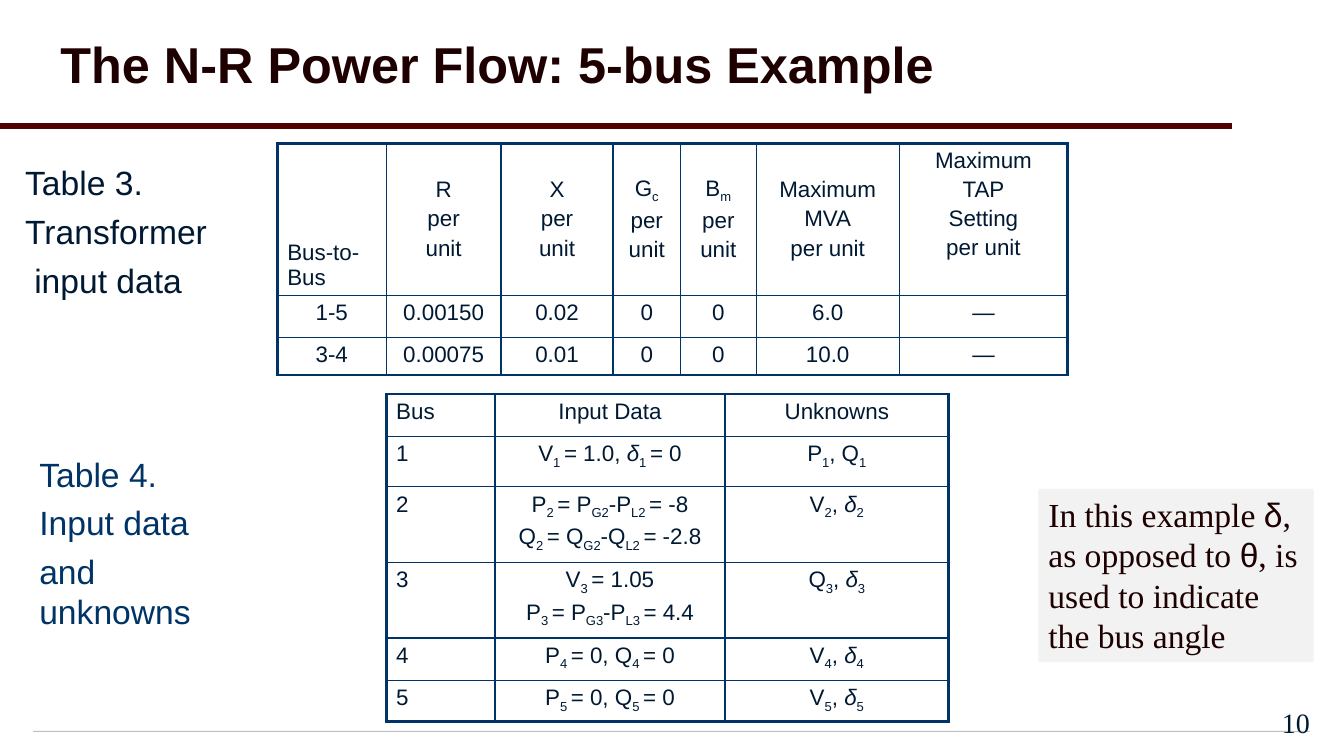
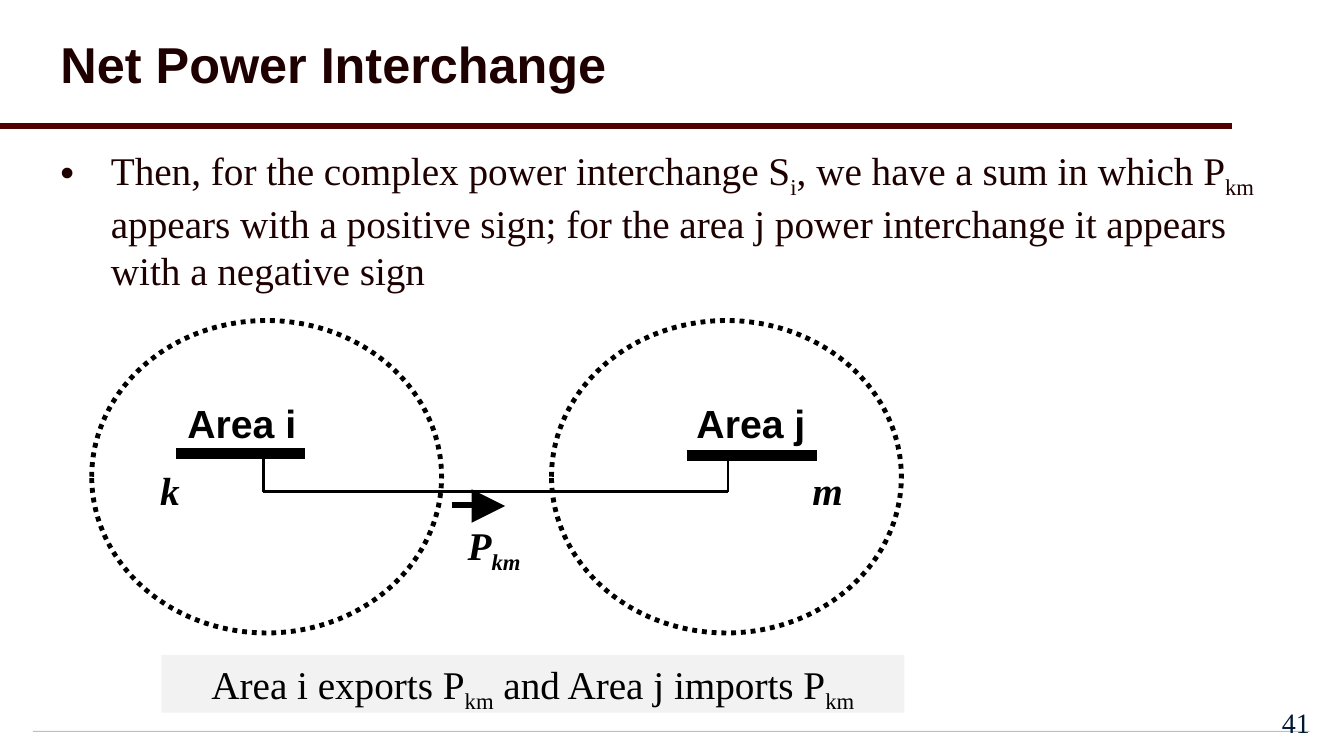
from lxml import etree
from pptx import Presentation
from pptx.dml.color import RGBColor
from pptx.enum.dml import MSO_LINE
from pptx.enum.shapes import MSO_CONNECTOR, MSO_SHAPE
from pptx.enum.text import MSO_ANCHOR, MSO_AUTO_SIZE, PP_ALIGN
from pptx.oxml.ns import qn
from pptx.util import Pt

PX = 9144  # 100 px to the inch
STRAIGHT = MSO_CONNECTOR.STRAIGHT
RECTANGLE, OVAL = MSO_SHAPE.RECTANGLE, MSO_SHAPE.OVAL
LEFT, CENTER, RIGHT = PP_ALIGN.LEFT, PP_ALIGN.CENTER, PP_ALIGN.RIGHT
TOP, MIDDLE, BOTTOM = MSO_ANCHOR.TOP, MSO_ANCHOR.MIDDLE, MSO_ANCHOR.BOTTOM
NO_AUTOFIT = MSO_AUTO_SIZE.NONE
DOTTED = MSO_LINE.ROUND_DOT

MAROON = RGBColor(0x50, 0x00, 0x00)
DARK_MAROON = RGBColor(0x1E, 0x00, 0x00)
NAVY = RGBColor(0x00, 0x19, 0x33)
BLUE = RGBColor(0x00, 0x33, 0x66)
GRAY = RGBColor(0xBF, 0xBF, 0xBF)
LIGHT_GRAY = RGBColor(0xF2, 0xF2, 0xF2)
BLACK = RGBColor(0x00, 0x00, 0x00)
SANS, SERIF = "Arial", "Times New Roman"


def write(frame, lines, size, color, font, align=LEFT, bold=False, italic=False,
          gap=0, greek_italic=False):
    """Fill a frame; "|" parts the spans of a line and "_" starts a subscript."""
    for index, line in enumerate(lines):
        para = frame.add_paragraph() if index else frame.paragraphs[0]
        para.alignment = align
        if index:
            para.space_before = Pt(gap)
        for piece in line.split("|"):
            span = para.add_run()
            span.text = piece.removeprefix("_")
            greek = piece in ("δ", "θ")
            span.font.name = SANS if greek else font
            span.font.size = Pt(size)
            span.font.bold = bold
            span.font.italic = italic or (greek and greek_italic)
            span.font.color.rgb = color
            if piece.startswith("_"):
                span.font.subscript = True
                span._r.get_or_add_rPr().set("baseline", "-25000")


def add_line(page, x1, y1, x2, y2, color, width, arrow=False):
    line = page.shapes.add_connector(STRAIGHT, x1 * PX, y1 * PX, x2 * PX, y2 * PX)
    line.line.color.rgb = color
    line.line.width = Pt(width)
    if arrow:
        etree.SubElement(line.line._get_or_add_ln(), qn("a:tailEnd"), type="triangle")
    etree.SubElement(line._element.spPr, qn("a:effectLst"))


deck = Presentation()
deck.slide_width, deck.slide_height = 1333 * PX, 750 * PX

# Shared frame: footer rule, title rule, title and page number
pages = []
for layout, title_text, number in (
    (5, "The N-R Power Flow: 5-bus Example", "10"),
    (1, "Net Power Interchange", "41"),
):
    page = deck.slides.add_slide(deck.slide_layouts[layout])
    pages.append(page)
    footer = page.shapes.add_shape(RECTANGLE, 33 * PX, 725 * PX, 1266 * PX, 1 * PX)
    footer.shadow.inherit = False
    footer.fill.solid()
    footer.fill.fore_color.rgb = GRAY
    footer.line.fill.background()
    add_line(page, 0, 125, 1222, 125, MAROON, 4)

    title = page.shapes.title
    title.left, title.top, title.width, title.height = 50 * PX, 8 * PX, 1222 * PX, 117 * PX
    title.text_frame.auto_size = NO_AUTOFIT
    title.text_frame.vertical_anchor = MIDDLE
    write(title.text_frame, [title_text], 36, DARK_MAROON, SANS, bold=True)
    title.text_frame.paragraphs[0].line_spacing = 0.9

    box = page.shapes.add_textbox(1242 * PX, 692 * PX, 67 * PX, 50 * PX)
    box.text_frame.vertical_anchor = MIDDLE
    write(box.text_frame, [number], 20, NAVY, SERIF, RIGHT)
example, interchange = pages

# Data of the two tables; "/" parts the lines of a cell
transformers = [
    ["Bus-to-Bus", "R/per/unit", "X/per/unit", "G|_c/per/unit", "B|_m/per/unit",
     "Maximum/MVA/per unit", "Maximum/TAP/Setting/per unit"],
    ["1-5", "0.00150", "0.02", "0", "0", "6.0", "—"],
    ["3-4", "0.00075", "0.01", "0", "0", "10.0", "—"],
]
unknowns = [
    ["Bus", "Input Data", "Unknowns"],
    ["1", "V|_1 |= 1.0, |δ|_1 |= 0", "P|_1|, Q|_1"],
    ["2", "P|_2 |= P|_G2|-P|_L2 |= -8/Q|_2 |= Q|_G2|-Q|_L2 |= -2.8", "V|_2|, |δ|_2"],
    ["3", "V|_3 |= 1.05/P|_3 |= P|_G3|-P|_L3 |= 4.4", "Q|_3|, |δ|_3"],
    ["4", "P|_4 |= 0, Q|_4 |= 0", "V|_4|, |δ|_4"],
    ["5", "P|_5 |= 0, Q|_5 |= 0", "V|_5|, |δ|_5"],
]

# Tables: thick outer border, thin inner lines
for left, top, widths, heights, rows in (
    (275, 142, [108, 114, 111, 67, 75, 142, 167], [151, 42, 37], transformers),
    (383, 391, [108, 228, 222], [42, 50, 75, 75, 42, 41], unknowns),
):
    last_row, last_column = len(heights) - 1, len(widths) - 1
    table = example.shapes.add_table(
        len(heights), len(widths), left * PX, top * PX, sum(widths) * PX, sum(heights) * PX
    ).table
    table.first_row = table.horz_banding = False
    for column, width in zip(table.columns, widths):
        column.width = width * PX
    for r, row in enumerate(rows):
        table.rows[r].height = heights[r] * PX
        for c, content in enumerate(row):
            cell = table.cell(r, c)
            plain_left = c == 0 and (r == 0 or rows is unknowns)
            write(cell.text_frame, content.split("/"), 16, NAVY, SANS,
                  LEFT if plain_left else CENTER, gap=3, greek_italic=True)
            if rows is transformers and r == 0:
                cell.vertical_anchor = {0: BOTTOM, last_column: TOP}.get(c, MIDDLE)
            borders = cell._tc.get_or_add_tcPr()
            for side, outer in (("L", c == 0), ("R", c == last_column),
                                ("T", r == 0), ("B", r == last_row)):
                edge = etree.SubElement(borders, qn("a:ln" + side), w=str(Pt(2.25 if outer else 1)))
                paint = etree.SubElement(edge, qn("a:solidFill"))
                etree.SubElement(paint, qn("a:srgbClr"), val=str(BLUE))
            cell.fill.background()

# Table captions
for left, top, width, height, color, lines in (
    (25, 161, 200, 137, NAVY, ["Table 3.", "Transformer", "input data"]),
    (39, 450, 159, 178, BLUE, ["Table 4.", "Input data", "and unknowns"]),
):
    box = example.shapes.add_textbox(left * PX, top * PX, width * PX, height * PX)
    frame = box.text_frame
    frame.word_wrap = True
    frame.margin_left = frame.margin_top = frame.margin_right = frame.margin_bottom = 0
    write(frame, lines, 24, color, SANS, gap=6)
    if color == NAVY:
        frame.paragraphs[2]._p.get_or_add_pPr().set("marL", str(9 * PX))

# Bulleted statement
body = interchange.placeholders[1]
body.left, body.top, body.width, body.height = 50 * PX, 140 * PX, 1208 * PX, 160 * PX
body.text_frame.auto_size = NO_AUTOFIT
bullet = body.text_frame.paragraphs[0]._p.get_or_add_pPr()
bullet.set("marL", str(50 * PX))
bullet.set("indent", str(-50 * PX))
bullet_color = etree.SubElement(bullet, qn("a:buClr"))
etree.SubElement(bullet_color, qn("a:srgbClr"), val=str(DARK_MAROON))
etree.SubElement(bullet, qn("a:buChar"), char="•")
write(body.text_frame, [
    "Then, for the complex power interchange S|_i|, we have a sum in which P|_km"
    "| appears with a positive sign; for the area j power interchange it appears"
    " with a negative sign"], 28, DARK_MAROON, SERIF)
body.text_frame.paragraphs[0].space_before = Pt(0)

# Bus bars, tie line and flow arrow
for x1, y1, x2, y2, width, arrow in (
    (175, 450, 303, 450, 8, False),
    (681, 452, 810, 452, 8, False),
    (261, 450, 261, 488, 2, False),
    (722, 452, 722, 488, 2, False),
    (261, 488, 722, 488, 2, False),
    (448, 501, 497, 501, 4, True),
    (484, 502, 501, 502, 8, True),
):
    add_line(interchange, x1, y1, x2, y2, BLACK, width, arrow)

# Area outlines
for left in (91, 547):
    area = interchange.shapes.add_shape(OVAL, left * PX, 318 * PX, 347 * PX, 310 * PX)
    area.shadow.inherit = False
    area.fill.background()
    area.line.color.rgb = BLACK
    area.line.width = Pt(3.5)
    area.line.dash_style = DOTTED

# Diagram labels
for left, top, width, height, label, font in (
    (176, 391, 158, 48, "Area i", SANS),
    (681, 391, 137, 48, "Area j", SANS),
    (149, 458, 54, 73, "k", SERIF),
    (796, 458, 54, 73, "m", SERIF),
    (454, 512, 92, 48, "P|_km", SERIF),
):
    box = interchange.shapes.add_textbox(left * PX, top * PX, width * PX, height * PX)
    box.text_frame.word_wrap = True
    write(box.text_frame, [label], 28, BLACK, font, bold=True, italic=font == SERIF)

# Gray notes
for page, left, top, width, height, note, size, color, align in (
    (example, 1030, 485, 273, 172,
     "In this example |δ|, as opposed to |θ|, is used to indicate the bus angle",
     24, DARK_MAROON, LEFT),
    (interchange, 160, 650, 737, 57,
     "Area i exports P|_km| and Area j imports P|_km", 28, BLACK, CENTER),
):
    panel = page.shapes.add_shape(RECTANGLE, left * PX, top * PX, width * PX, height * PX)
    panel.shadow.inherit = False
    panel.fill.solid()
    panel.fill.fore_color.rgb = LIGHT_GRAY
    panel.line.fill.background()
    panel.text_frame.word_wrap = True
    panel.text_frame.vertical_anchor = TOP
    write(panel.text_frame, [note], size, color, SERIF, align)

deck.save("out.pptx")
